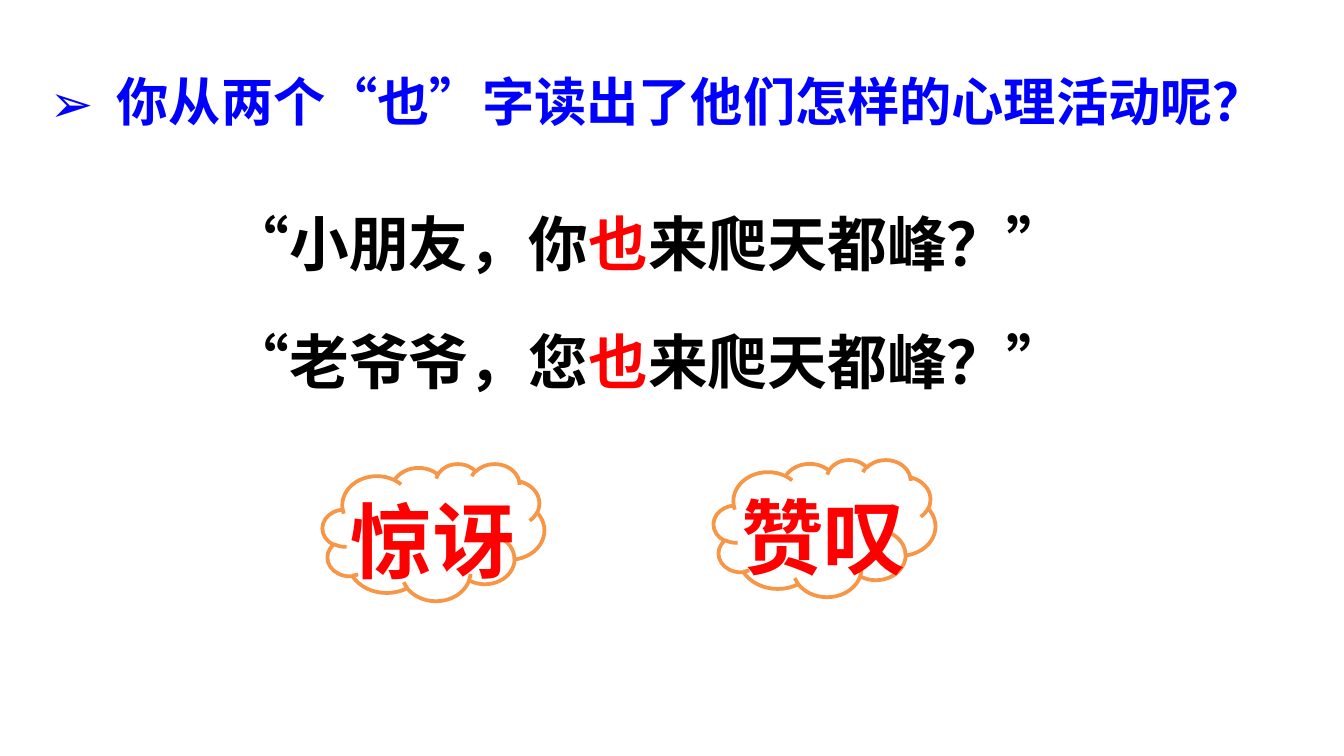
from lxml import etree
from pptx import Presentation
from pptx.dml.color import RGBColor
from pptx.enum.lang import MSO_LANGUAGE_ID
from pptx.enum.shapes import MSO_SHAPE
from pptx.enum.text import MSO_AUTO_SIZE
from pptx.oxml.ns import qn
from pptx.util import Inches, Pt

CLOUD = MSO_SHAPE.CLOUD
GROW = MSO_AUTO_SIZE.SHAPE_TO_FIT_TEXT
CHINESE = MSO_LANGUAGE_ID.SIMPLIFIED_CHINESE
FONT = "Noto Sans CJK SC"
WIDE = 10
HIGH = WIDE * 9 / 16
BLACK, RED, BLUE = "000000", "FF0000", "0000FF"
WHITE, ORANGE = "FFFFFF", "F79646"


def paint(color):
    return RGBColor.from_string(color)


def place(box):
    return [Inches(n) for n in box]


def add_bullet(para, mark, indent):
    props = para._p.get_or_add_pPr()
    props.set("marL", str(Inches(indent)))
    props.set("indent", str(-Inches(indent)))
    etree.SubElement(props, qn("a:buFont")).set("typeface", FONT)
    etree.SubElement(props, qn("a:buChar")).set("char", mark)


def add_text(shapes, box, runs, size, wrap=True, mark=None):
    """Add one line of bold text; runs are (words, color) pairs."""
    frame = shapes.add_textbox(*place(box)).text_frame
    frame.word_wrap = wrap
    frame.auto_size = GROW
    para = frame.paragraphs[0]
    para.line_spacing = 1.2
    if mark:
        add_bullet(para, mark, 0.5)
    for words, color in runs:
        run = para.add_run()
        run.text = words
        font = run.font
        font.size, font.bold, font.name = Pt(size), True, FONT
        font.language_id = CHINESE
        font.color.rgb = paint(color)
        etree.SubElement(run._r.rPr, qn("a:ea")).set("typeface", FONT)


def add_title(shapes, box):
    words = "你从两个“也”字读出了他们怎样的心理活动呢？"
    add_text(shapes, box, [(words, BLUE)], 28, mark="➢")


def add_quotes(shapes, box, heads):
    """Stack the spoken lines, one to each row of the box."""
    left, top, wide, high = box
    row = high / len(heads)
    for i, head in enumerate(heads):
        runs = [(head, BLACK), ("也", RED), ("来爬天都峰？”", BLACK)]
        add_text(shapes, (left, top + i * row, wide, 0.75), runs, 32)


def add_cloud(shapes, box, word):
    left, top, wide, high = box
    group = shapes.add_group_shape().shapes
    cloud = group.add_shape(CLOUD, *place(box))
    cloud.shadow.inherit = False
    cloud.fill.solid()
    cloud.fill.fore_color.rgb = paint(WHITE)
    cloud.line.color.rgb = paint(ORANGE)
    cloud.line.width = Pt(2)
    inset = wide / 15
    label = (left + inset, top, wide - 2 * inset, high * 0.85)
    add_text(group, label, [(word, RED)], 44, wrap=False)


def main():
    deck = Presentation()
    deck.slide_width, deck.slide_height = place((WIDE, HIGH))
    shapes = deck.slides.add_slide(deck.slide_layouts[6]).shapes
    add_quotes(shapes, (1.61, 1.38, 7.09, 1.76), ["“小朋友，你", "“老爷爷，您"])
    add_title(shapes, (0.27, 0.37, 9.61, 0.59))
    for left, top, word in [(5.31, 3.42, "赞叹"), (2.4, 3.45, "惊讶")]:
        add_cloud(shapes, (left, top, 1.65, 1.02), word)
    deck.save("out.pptx")


if __name__ == "__main__":
    main()
